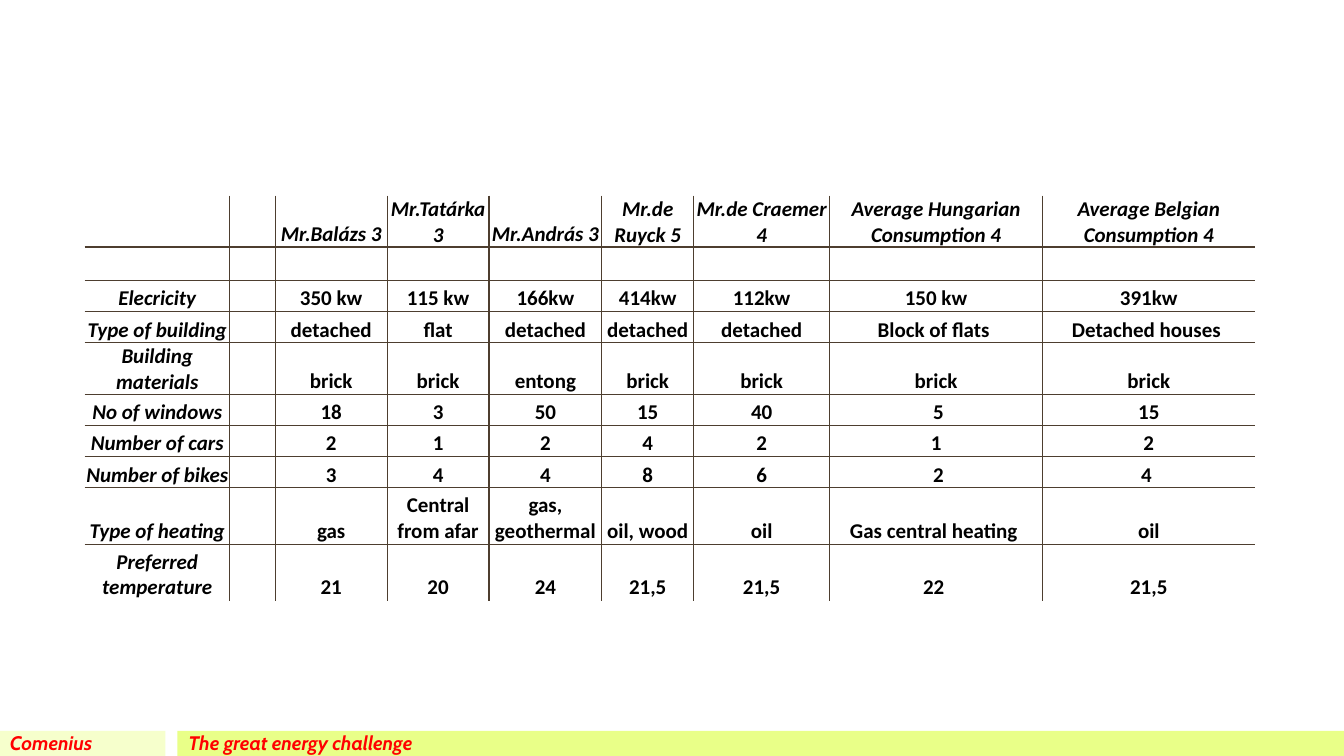
from lxml.etree import SubElement
from pptx import Presentation
from pptx.dml.color import RGBColor
from pptx.enum.shapes import MSO_SHAPE
from pptx.enum.text import MSO_ANCHOR, MSO_AUTO_SIZE, PP_ALIGN
from pptx.oxml.ns import qn
from pptx.util import Inches, Pt

COLORS = {
    "pale": "F6FFCC",
    "lime": "E9FF88",
    "footer": "FF0000",
    "text": "000000",
    "border": "4D3E2F",
}
COLUMN_WIDTHS = [1.44, 0.45, 1.11, 1.01, 1.12, 0.91, 1.35, 2.11, 2.11]
ROW_HEIGHTS = [0.31, 0.33] + [0.31] * 6 + [0.56] * 2
CONSUMPTION = [
    ["", "", "Mr.Balázs 3", "Mr.Tatárka 3", "Mr.András 3", "Mr.de Ruyck 5",
     "Mr.de Craemer 4", "Average Hungarian Consumption 4",
     "Average Belgian Consumption 4"],
    [""] * 9,
    ["Elecricity", "", "350 kw", "115 kw", "166kw", "414kw", "112kw", "150 kw", "391kw"],
    ["Type of building", "", "detached", "flat", "detached", "detached", "detached",
     "Block of flats ", "Detached houses "],
    ["Building materials", "", "brick", "brick", "entong", "brick", "brick", "brick", "brick"],
    ["No of windows", "", "18", "3", "50", "15", "40", " 5", "15"],
    ["Number of cars", "", "2", "1", "2", "4", "2", "1", "2"],
    ["Number of bikes", "", "3", "4", "4", "8", "6", " 2", "4 "],
    ["Type of heating", "", "gas", "Central from afar", "gas,\ngeothermal", "oil, wood",
     "oil", "Gas central heating ", "oil"],
    ["Preferred temperature", "", "21", "20", "24", "21,5", "21,5", "22 ", "21,5"],
]


def write_text(frame, text, *, size, font, color, italic=True, align=PP_ALIGN.LEFT):
    """Fill a text frame with bold text, one paragraph per line."""
    frame.text = text
    for para in frame.paragraphs:
        para.alignment = align
        for span in para.runs:
            span.font.size = Pt(size)
            span.font.name = font
            span.font.bold = True
            span.font.italic = italic
            span.font.color.rgb = RGBColor.from_string(COLORS[color])


def add_bar(page, left, width, color):
    bar = page.shapes.add_shape(MSO_SHAPE.RECTANGLE, Inches(left), Inches(7.25),
                                Inches(width), Inches(0.25))
    bar.shadow.inherit = False
    bar.fill.solid()
    bar.fill.fore_color.rgb = RGBColor.from_string(COLORS[color])
    bar.line.fill.background()


def add_footer_text(page, left, width, text):
    box = page.shapes.add_textbox(Inches(left), Inches(7.2), Inches(width), Inches(0.34))
    box.text_frame.word_wrap = True
    box.text_frame.auto_size = MSO_AUTO_SIZE.SHAPE_TO_FIT_TEXT
    write_text(box.text_frame, text, size=14, font="Cabin", color="footer")


def set_borders(cell, visible_sides):
    """Draw the given sides of a cell and clear the others."""
    properties = cell._tc.get_or_add_tcPr()
    for side in "LRTB":
        line = SubElement(properties, qn(f"a:ln{side}"), w=str(Pt(1)))
        if side in visible_sides:
            fill = SubElement(line, qn("a:solidFill"))
            SubElement(fill, qn("a:srgbClr"), val=COLORS["border"])
        else:
            SubElement(line, qn("a:noFill"))


def format_cell(cell, text, *, italic, sides):
    cell.margin_left = cell.margin_right = cell.margin_top = Inches(0.01)
    cell.margin_bottom = 0
    cell.vertical_anchor = MSO_ANCHOR.BOTTOM
    if text:
        write_text(cell.text_frame, text, size=15, font="Calibri", color="text",
                   italic=italic, align=PP_ALIGN.CENTER)
    else:
        # Keep empty cells from stretching their row
        SubElement(cell.text_frame.paragraphs[0]._p, qn("a:endParaRPr"), sz="1500")
    set_borders(cell, sides)
    cell.fill.background()


def add_consumption_table(page):
    row_count, column_count = len(ROW_HEIGHTS), len(COLUMN_WIDTHS)
    table = page.shapes.add_table(
        row_count, column_count, Inches(0.84), Inches(1.94),
        Inches(sum(COLUMN_WIDTHS)), Inches(sum(ROW_HEIGHTS))).table
    table.first_row = table.horz_banding = False
    for column, width in zip(table.columns, COLUMN_WIDTHS):
        column.width = Inches(width)
    for row, height in zip(table.rows, ROW_HEIGHTS):
        row.height = Inches(height)

    # Only the inner grid lines are drawn
    for r, values in enumerate(CONSUMPTION):
        for c, text in enumerate(values):
            inner = {"L": c > 0, "R": c < column_count - 1,
                     "T": r > 0, "B": r < row_count - 1}
            sides = [side for side, shown in inner.items() if shown]
            format_cell(table.cell(r, c), text, italic=r == 0 or c == 0, sides=sides)


def main():
    deck = Presentation()
    deck.slide_width, deck.slide_height = Inches(13.33), Inches(7.5)
    page = deck.slides.add_slide(deck.slide_layouts[6])

    # Footer
    add_bar(page, 0, 1.64, "pale")
    add_bar(page, 1.76, 11.57, "lime")
    add_footer_text(page, 1.77, 7.46, "The great energy challenge")
    add_footer_text(page, 0, 1.57, "Comenius")

    # Household comparison
    add_consumption_table(page)

    deck.save("out.pptx")


if __name__ == "__main__":
    main()
